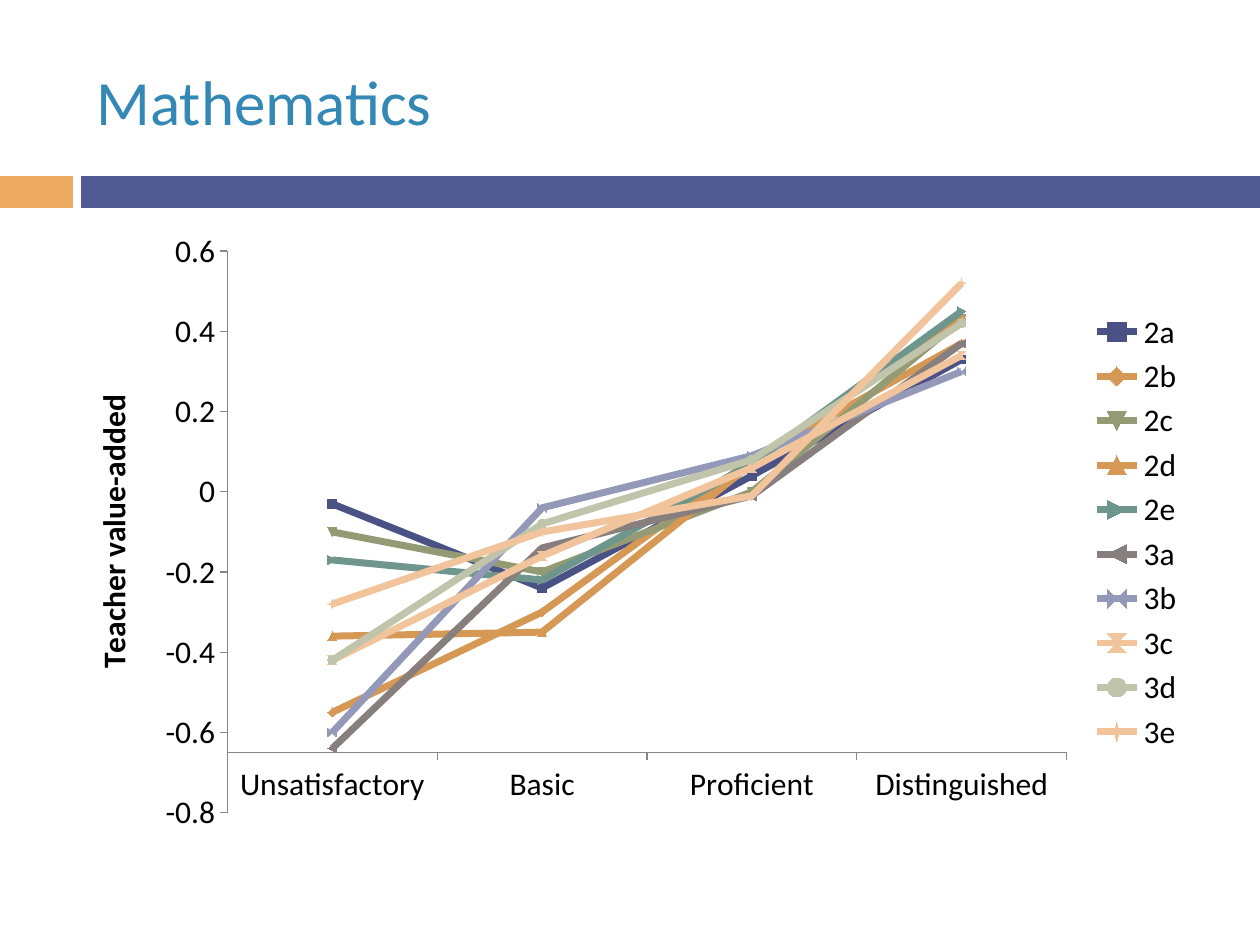
from lxml import etree
from pptx import Presentation
from pptx.chart.data import CategoryChartData
from pptx.dml.color import RGBColor
from pptx.enum.chart import XL_CHART_TYPE, XL_LEGEND_POSITION, XL_TICK_MARK
from pptx.enum.shapes import MSO_SHAPE
from pptx.enum.text import MSO_ANCHOR, PP_ALIGN
from pptx.oxml.ns import qn
from pptx.util import Emu, Pt

PX = 914400 / 126
FONT = "Calibri"
COLORS = {
    "title": "3488B6", "text": "000000", "axis": "868686",
    "orange_bar": "EDAA61", "blue_bar": "525A93",
    "navy": "4A5184", "orange": "D69955", "olive": "949A74", "teal": "6E968D",
    "gray": "877E7E", "lavender": "9499B9", "peach": "F2C49C", "sage": "C0C4AB",
}
RATINGS = ["Unsatisfactory", "Basic", "Proficient", "Distinguished"]
COMPONENTS = [
    ("2a", "navy", (-0.03, -0.24, 0.04, 0.33)),
    ("2b", "orange", (-0.55, -0.3, 0.08, 0.37)),
    ("2c", "olive", (-0.1, -0.2, 0, 0.43)),
    ("2d", "orange", (-0.36, -0.35, 0.07, 0.44)),
    ("2e", "teal", (-0.17, -0.22, 0.07, 0.45)),
    ("3a", "gray", (-0.64, -0.14, -0.01, 0.37)),
    ("3b", "lavender", (-0.6, -0.04, 0.09, 0.3)),
    ("3c", "peach", (-0.42, -0.16, 0.06, 0.34)),
    ("3d", "sage", (-0.42, -0.08, 0.08, 0.42)),
    ("3e", "peach", (-0.28, -0.1, -0.01, 0.52)),
]


def px(*lengths):
    return [Emu(round(length * PX)) for length in lengths]


def rgb(name):
    return RGBColor.from_string(COLORS[name])


class SlideBuilder:
    def __init__(self, slide):
        self.slide = slide

    def style_font(self, font, size, color="text", bold=False):
        font.name, font.size, font.bold = FONT, Pt(size), bold
        font.color.rgb = rgb(color)

    def title(self, text, *box):
        shape = self.slide.shapes.title
        shape.left, shape.top, shape.width, shape.height = px(*box)
        shape.text_frame.vertical_anchor = MSO_ANCHOR.MIDDLE
        paragraph = shape.text_frame.paragraphs[0]
        paragraph.alignment = PP_ALIGN.LEFT
        run = paragraph.add_run()
        run.text = text
        self.style_font(run.font, 36, "title")

    def bar(self, color, *box):
        shape = self.slide.shapes.add_shape(MSO_SHAPE.RECTANGLE, *px(*box))
        shape.shadow.inherit = False
        shape.fill.solid()
        shape.fill.fore_color.rgb = rgb(color)
        shape.line.fill.background()

    def line_chart(self, categories, components, axis_title, *box):
        data = CategoryChartData()
        data.categories = categories
        for name, _, values in components:
            data.add_series(name, values)
        frame = self.slide.shapes.add_chart(XL_CHART_TYPE.LINE_MARKERS, *px(*box), data)
        chart = frame.chart
        self.style_font(chart.font, 18)
        chart.has_title = False
        chart.plots[0].vary_by_categories = False

        # Series lines and automatic marker symbols
        for series, (_, color, _) in zip(chart.plots[0].series, components):
            series.smooth = False
            series.format.line.width = Pt(4)
            series.format.line.color.rgb = rgb(color)
            series.marker.size = 5
            series.marker.format.fill.solid()
            series.marker.format.fill.fore_color.rgb = rgb(color)
            series.marker.format.line.color.rgb = rgb(color)

        # Axes: the category axis crosses just above the bottom
        for axis in (chart.category_axis, chart.value_axis):
            axis.has_major_gridlines = False
            axis.major_tick_mark = XL_TICK_MARK.OUTSIDE
            axis.minor_tick_mark = XL_TICK_MARK.NONE
            axis.format.line.color.rgb = rgb("axis")
            axis.format.line.width = Pt(0.75)
            self.style_font(axis.tick_labels.font, 18)
        value_axis = chart.value_axis
        value_axis.minimum_scale, value_axis.maximum_scale = -0.8, 0.6
        value_axis.major_unit = 0.2
        value_axis.crosses_at = -0.65
        value_axis.tick_labels.number_format = "General"
        value_axis.tick_labels.number_format_is_linked = False
        run = value_axis.axis_title.text_frame.paragraphs[0].add_run()
        run.text = axis_title
        self.style_font(run.font, 18, bold=True)

        # Legend
        chart.has_legend = True
        chart.legend.position = XL_LEGEND_POSITION.RIGHT
        chart.legend.include_in_layout = False
        self.style_font(chart.legend.font, 18)
        self.place_plot(chart, x=0.145, y=0.05, w=0.74, h=0.9)

    def place_plot(self, chart, **fractions):
        plot_area = chart.plots[0]._element.getparent()
        for layout in plot_area.findall(qn("c:layout")):
            plot_area.remove(layout)
        layout = etree.Element(qn("c:layout"))
        manual = etree.SubElement(layout, qn("c:manualLayout"))
        settings = {"layoutTarget": "inner", "xMode": "edge", "yMode": "edge", **fractions}
        for name, value in settings.items():
            etree.SubElement(manual, qn(f"c:{name}")).set("val", str(value))
        plot_area.insert(0, layout)


def main():
    presentation = Presentation()
    presentation.slide_width, presentation.slide_height = px(1260, 945)
    slide = presentation.slides.add_slide(presentation.slide_layouts[5])
    builder = SlideBuilder(slide)

    # Header bars and title
    builder.bar("orange_bar", 0, 176, 73, 32)
    builder.bar("blue_bar", 81, 176, 1179, 32)
    builder.title("Mathematics", 84, 32, 1124, 136)

    # Value-added by rating
    builder.line_chart(RATINGS, COMPONENTS, "Teacher value-added", 63, 220, 1134, 624)
    presentation.save("out.pptx")


if __name__ == "__main__":
    main()
